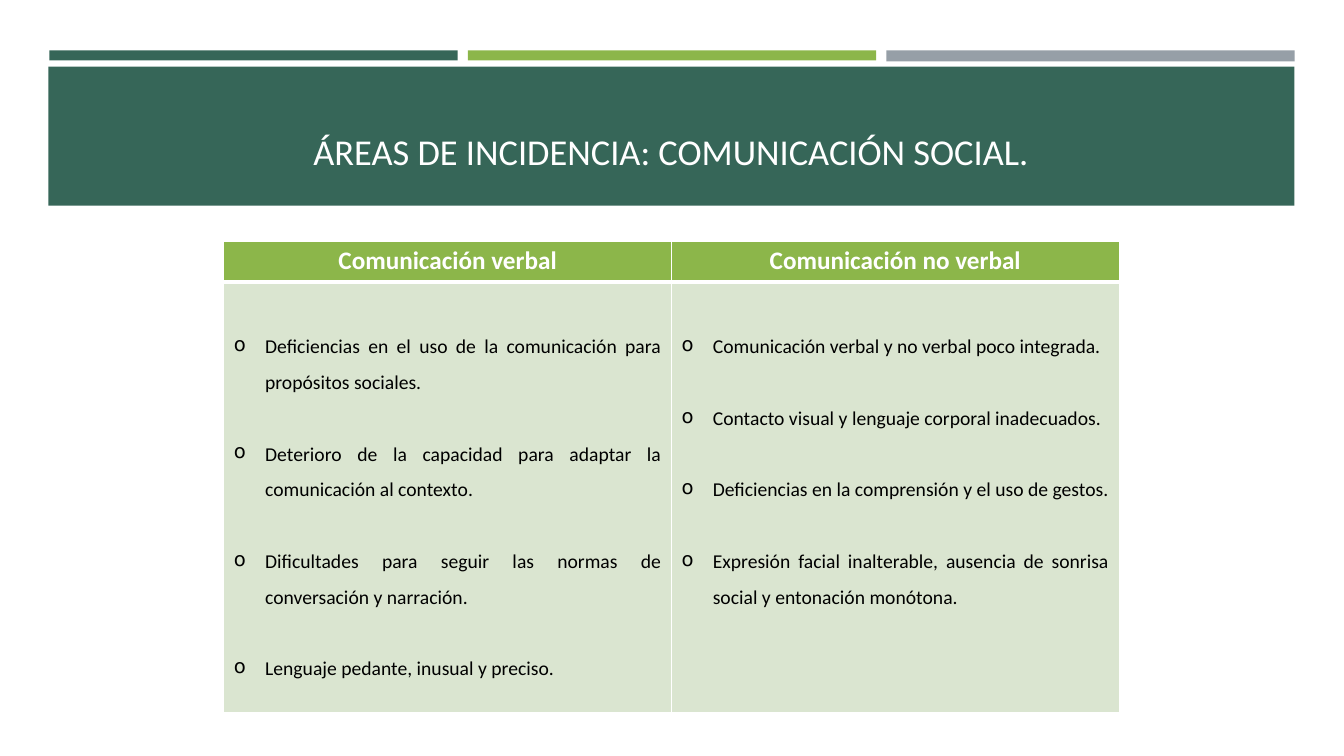
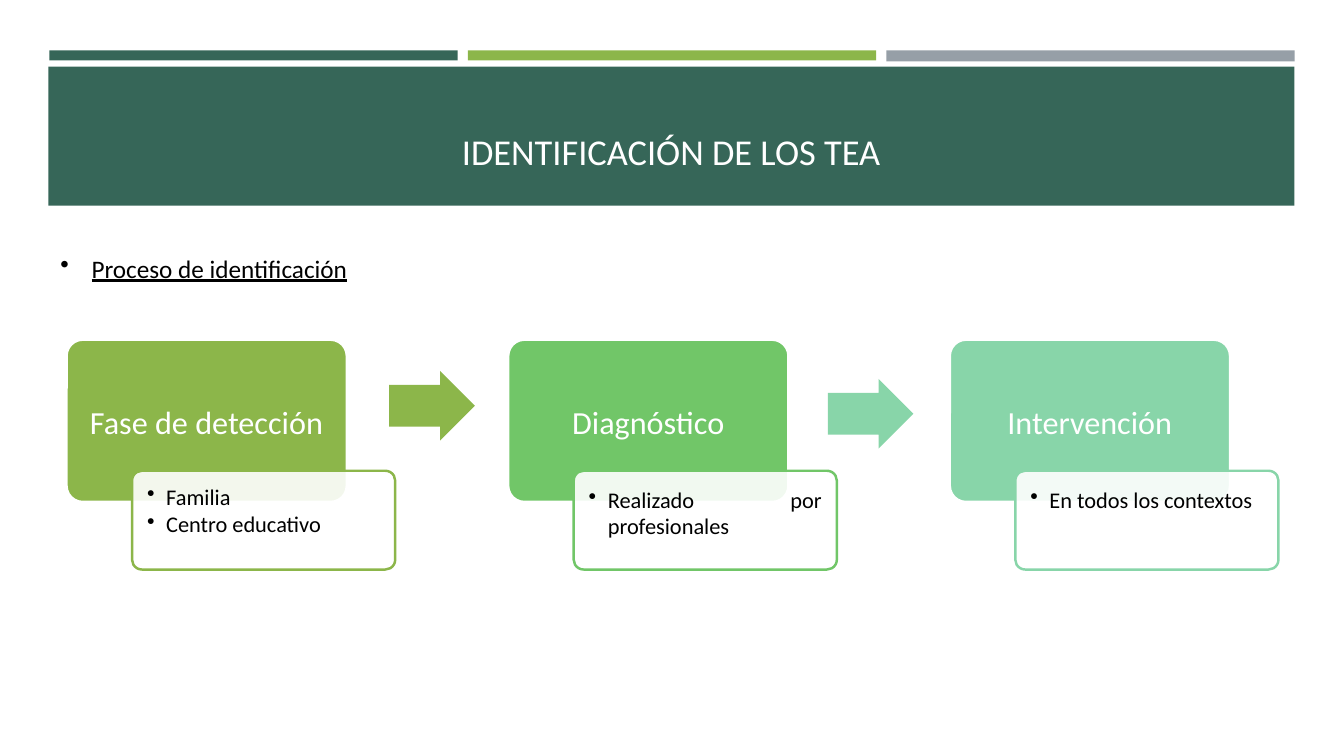
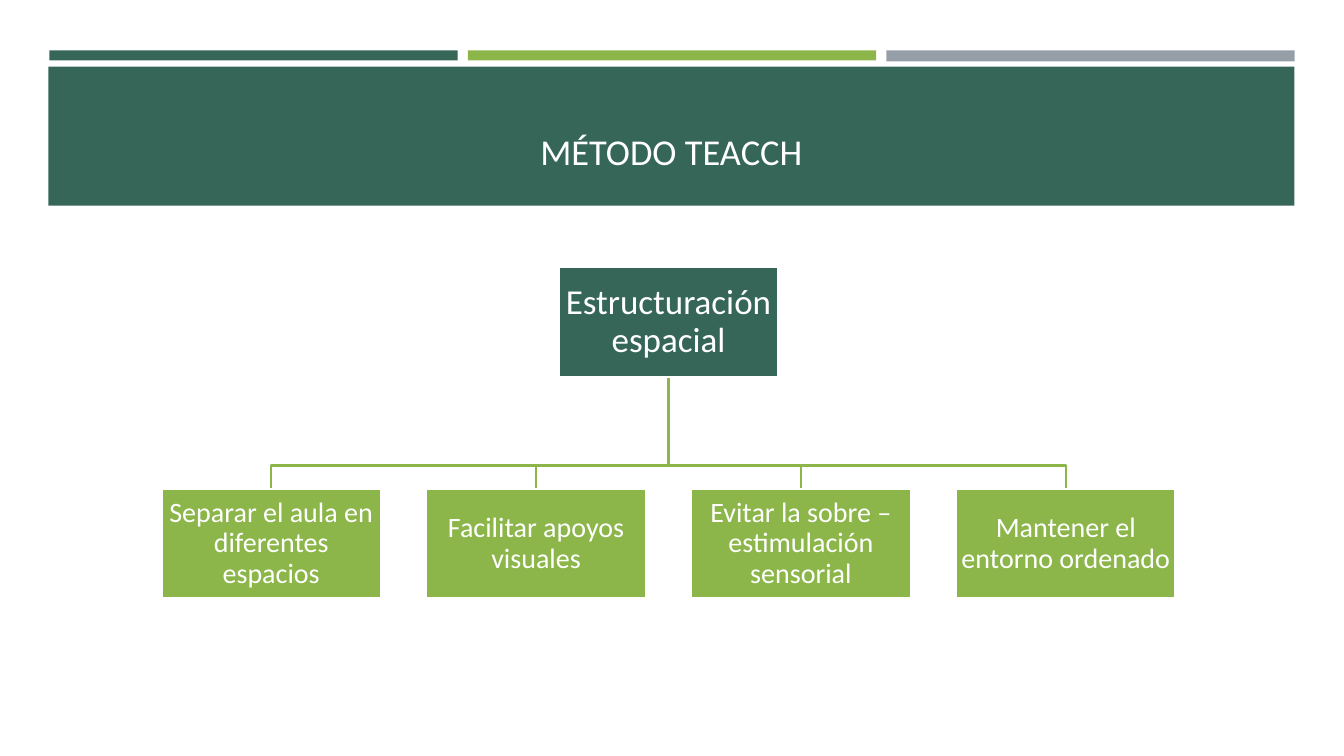
from lxml import etree
from pptx import Presentation
from pptx.dml.color import RGBColor
from pptx.enum import shapes, text
from pptx.oxml import ns
from pptx.util import Inches, Pt

FONT = "Calibri"
DARK, GREEN, GRAY = "366658", "8CB64A", "969FA7"
MINT, AQUA, PALE = "71C668", "88D5A9", "DAE5D0"
WHITE, BLACK = "FFFFFF", "000000"
CENTER, JUSTIFY = text.PP_ALIGN.CENTER, text.PP_ALIGN.JUSTIFY
TOP, MIDDLE, BOTTOM = (text.MSO_ANCHOR.TOP, text.MSO_ANCHOR.MIDDLE,
                       text.MSO_ANCHOR.BOTTOM)


def paint(shape, fill=None, line=None):
    """Give a shape flat colours; None leaves the part empty."""
    shape.shadow.inherit = False
    for part, color in ((shape.fill, fill), (shape.line.fill, line)):
        if color:
            part.solid()
            part.fore_color.rgb = RGBColor.from_string(color)
        else:
            part.background()
    if line:
        shape.line.width = Pt(1.75)


def write(frame, lines, color, font, layout=None, gap=None, bullet=None, indent=0):
    """Write one paragraph per line; gap is the space between paragraphs."""
    for index, line in enumerate(lines):
        paragraph = frame.paragraphs[0] if index == 0 else frame.add_paragraph()
        for name, value in (layout or {}).items():
            setattr(paragraph, name, value)
        if index and gap:
            paragraph.space_before = gap
        if bullet:
            properties = paragraph._p.get_or_add_pPr()
            properties.set("marL", str(Inches(indent)))
            properties.set("indent", str(-Inches(indent)))
            etree.SubElement(properties, ns.qn("a:buChar")).set("char", bullet)
        run = paragraph.add_run()
        run.text = line
        run.font.color.rgb = RGBColor.from_string(color)
        for name, value in {"name": FONT, **font}.items():
            setattr(run.font, name, value)


presentation = Presentation()
presentation.slide_width, presentation.slide_height = Inches(13.33), Inches(7.5)
title_layout = presentation.slide_layouts[5]

# Slides and their titles
titles = [
    "ÁREAS DE INCIDENCIA: COMUNICACIÓN SOCIAL.",
    "IDENTIFICACIÓN DE LOS TEA",
    "MÉTODO TEACCH",
]
slides = []
for title in titles:
    slide = presentation.slides.add_slide(title_layout)
    shape = slide.shapes.title
    position = {"left": 0.63, "top": 0.8, "width": 12.06, "height": 0.96}
    for name, value in position.items():
        setattr(shape, name, Inches(value))
    shape.text_frame.vertical_anchor = BOTTOM
    write(shape.text_frame, [title], WHITE, {"size": Pt(26)}, {"alignment": CENTER})
    slides.append(slide)
table_slide, process_slide, tree_slide = slides

# Bands shared by every slide, kept on the layout behind the title
bands = [
    (0.49, 0.5, 4.05, 0.1, DARK),
    (4.64, 0.5, 4.05, 0.1, GREEN),
    (8.79, 0.5, 4.05, 0.11, GRAY),
    (0.48, 0.66, 12.36, 1.38, DARK),
]
for index, (*box, color) in enumerate(bands):
    band = table_slide.shapes.add_shape(shapes.MSO_SHAPE.RECTANGLE, *map(Inches, box))
    paint(band, color)
    band.element.nvSpPr.cNvPr.set("id", str(20 + index))
    title_layout.shapes.element.insert(2 + index, band.element)

# Slide 1: table of communication areas
columns = {
    "Comunicación verbal": [
        "Deficiencias en el uso de la comunicación para propósitos sociales.",
        "Deterioro de la capacidad para adaptar la comunicación al contexto.",
        "Dificultades para seguir las normas de conversación y narración.",
        "Lenguaje pedante, inusual y preciso.",
    ],
    "Comunicación no verbal": [
        "Comunicación verbal y no verbal poco integrada.",
        "Contacto visual y lenguaje corporal inadecuados.",
        "Deficiencias en la comprensión y el uso de gestos.",
        "Expresión facial inalterable, ausencia de sonrisa social y entonación monótona.",
    ],
}
table = table_slide.shapes.add_table(
    2, 2, Inches(2.22), Inches(2.39), Inches(8.88), Inches(4.67)).table
table.rows[0].height, table.rows[1].height = Inches(0.4), Inches(4.27)
for column, (heading, items) in enumerate(columns.items()):
    header, body = table.cell(0, column), table.cell(1, column)
    write(header.text_frame, [heading], WHITE,
          {"size": Pt(18), "bold": True}, {"alignment": CENTER})
    body.margin_top = Inches(0.41)
    write(body.text_frame, items, BLACK, {"size": Pt(14), "bold": False},
          {"alignment": JUSTIFY, "line_spacing": 1.5},
          gap=Pt(25.6), bullet="o", indent=0.31)
    for cell, fill, top, bottom in ((header, GREEN, 1, 3), (body, PALE, 3, 1)):
        cell.fill.solid()
        cell.fill.fore_color.rgb = RGBColor.from_string(fill)
        sides = {"lnL": 1, "lnR": 1, "lnT": top, "lnB": bottom}
        for index, (side, width) in enumerate(sides.items()):
            border = etree.Element(ns.qn("a:" + side), w=str(Pt(width)))
            solid = etree.SubElement(border, ns.qn("a:solidFill"))
            etree.SubElement(solid, ns.qn("a:srgbClr")).set("val", WHITE)
            cell._tc.get_or_add_tcPr().insert(index, border)

# Slide 2: heading
heading = process_slide.shapes.add_textbox(
    Inches(0.5), Inches(2.46), Inches(12.34), Inches(0.4))
heading.text_frame.word_wrap = True
write(heading.text_frame, ["Proceso de identificación"], BLACK,
      {"size": Pt(18), "underline": True}, bullet="•", indent=0.31)

# Slide 2: three phases, each with a detail card and an arrow to the next
phases = [
    ("Fase de detección", ["Familia", "Centro educativo"], GREEN, 0.9, (3.86, 3.68)),
    ("Diagnóstico", ["Realizado por profesionales"], MINT, 1.0, (8.21, 3.76)),
    ("Intervención", ["En todos los contextos"], AQUA, 1.0, None),
]
for index, (name, details, color, spacing, arrow_at) in enumerate(phases):
    left = 0.66 + 4.38 * index
    phase = process_slide.shapes.add_shape(
        shapes.MSO_SHAPE.ROUNDED_RECTANGLE,
        Inches(left), Inches(3.37), Inches(2.78), Inches(1.61))
    paint(phase, color, WHITE)
    card = process_slide.shapes.add_shape(
        shapes.MSO_SHAPE.ROUNDED_RECTANGLE,
        Inches(left + 0.65), Inches(4.67), Inches(2.61), Inches(0.98))
    paint(card, WHITE, color)
    card_color = card.element.spPr.find(ns.qn("a:solidFill"))[0]
    etree.SubElement(card_color, ns.qn("a:alpha")).set("val", "90000")
    for shape, anchor, margin in ((phase, MIDDLE, 0.07), (card, TOP, 0.12)):
        shape.adjustments[0] = 0.1
        frame = shape.text_frame
        frame.vertical_anchor = anchor
        frame.margin_left = frame.margin_right = Inches(0.12)
        frame.margin_top = Inches(margin)
        frame.margin_bottom = 0
    write(phase.text_frame, [name], WHITE, {"size": Pt(23)},
          {"alignment": CENTER, "line_spacing": 0.9})
    write(card.text_frame, details, BLACK, {"size": Pt(16)},
          {"alignment": JUSTIFY, "line_spacing": spacing},
          gap=Pt(2.4), bullet="•", indent=0.19)
    if arrow_at:
        arrow = process_slide.shapes.add_shape(
            shapes.MSO_SHAPE.RIGHT_ARROW, *map(Inches, arrow_at),
            Inches(0.85), Inches(0.69))
        arrow.adjustments[0], arrow.adjustments[1] = 0.6, 0.5
        paint(arrow, AQUA if index else GREEN)

# Slide 3: tree with one root and four branches
node_width, node_height = 2.18, 1.09
root_left, root_top, branch_top, bend = 5.54, 2.65, 4.85, 4.62
nodes = [("Estructuración espacial", root_left, root_top, DARK, 25)]
branches = [
    "Separar el aula en diferentes espacios",
    "Facilitar apoyos visuales",
    "Evitar la sobre – estimulación sensorial",
    "Mantener el entorno ordenado",
]
root_center = root_left + node_width / 2
for index, label in enumerate(branches):
    left = 1.6 + 2.627 * index
    nodes.append((label, left, branch_top, GREEN, 20))
    center = left + node_width / 2
    builder = tree_slide.shapes.build_freeform(
        Inches(root_center), Inches(root_top + node_height))
    builder.add_line_segments(
        [(Inches(x), Inches(y)) for x, y in
         ((root_center, bend), (center, bend), (center, branch_top))], close=False)
    paint(builder.convert_to_shape(), None, GREEN)

for label, left, top, color, size in nodes:
    node = tree_slide.shapes.add_shape(
        shapes.MSO_SHAPE.RECTANGLE, Inches(left), Inches(top),
        Inches(node_width), Inches(node_height))
    paint(node, color, WHITE)
    frame = node.text_frame
    frame.vertical_anchor = MIDDLE
    for side in ("left", "right", "top", "bottom"):
        setattr(frame, "margin_" + side, Inches(0.01))
    write(frame, [label], WHITE, {"size": Pt(size)},
          {"alignment": CENTER, "line_spacing": 0.9})

presentation.save("out.pptx")
